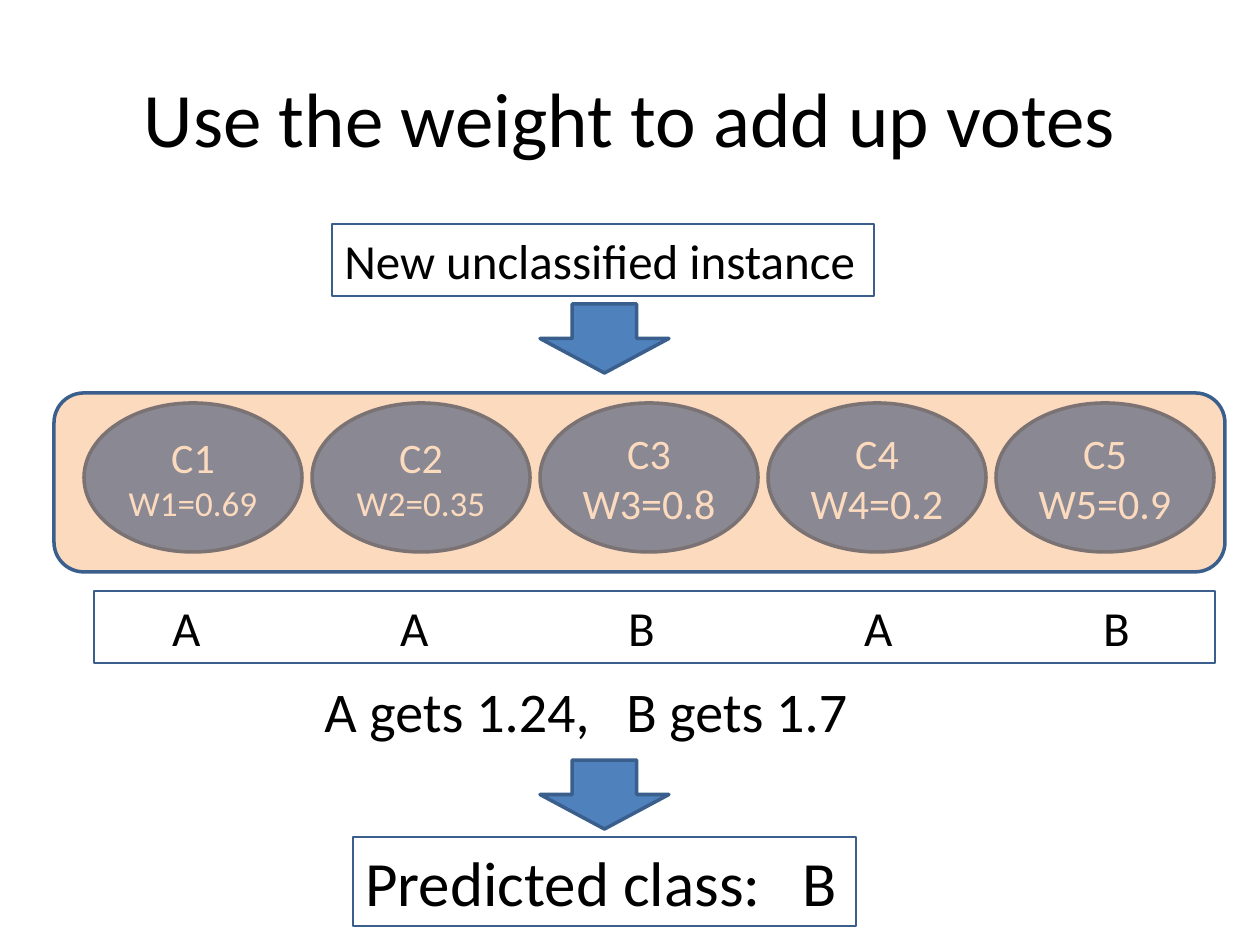
from lxml.etree import SubElement
from pptx import Presentation
from pptx.dml.color import RGBColor
from pptx.enum.shapes import MSO_SHAPE
from pptx.enum.text import MSO_ANCHOR, PP_ALIGN
from pptx.oxml.ns import qn
from pptx.util import Emu, Pt

BLACK = RGBColor(0x00, 0x00, 0x00)
WHITE = RGBColor(0xFF, 0xFF, 0xFF)
BLUE = RGBColor(0x4F, 0x81, 0xBD)
NAVY = RGBColor(0x3A, 0x5F, 0x8C)
ORANGE = RGBColor(0xF7, 0x96, 0x46)


def px(n):
    return Emu(round(n * 914400 / 126))


class SlideBuilder:
    font = "Calibri"

    def __init__(self, prs):
        self.s = prs.slides.add_slide(prs.slide_layouts[5])

    def style(self, p, size, color, align):
        p.alignment = align
        for r in p.runs:
            r.font.name = self.font
            r.font.size = Pt(size)
            r.font.color.rgb = color

    def title(self, text, x, y, w, h):
        sp = self.s.shapes.title
        sp.left, sp.top, sp.width, sp.height = map(px, (x, y, w, h))
        tf = sp.text_frame
        tf.text = text
        tf.vertical_anchor = MSO_ANCHOR.MIDDLE
        self.style(tf.paragraphs[0], 44, BLACK, PP_ALIGN.CENTER)

    def shape(self, kind, x, y, w, h, fill=BLUE, alpha=None):
        sp = self.s.shapes.add_shape(kind, px(x), px(y), px(w), px(h))
        sp.shadow.inherit = False
        sp.fill.solid()
        sp.fill.fore_color.rgb = fill
        if alpha is not None:
            color = sp.fill._xPr.find(".//" + qn("a:srgbClr"))
            SubElement(color, qn("a:alpha"), val=str(alpha * 1000))
        sp.line.color.rgb = NAVY
        sp.line.width = Pt(2)
        return sp

    def classifier(self, name, weight, weight_size, x, y, w, h):
        tf = self.shape(MSO_SHAPE.OVAL, x, y, w, h).text_frame
        tf.margin_left = tf.margin_right = 0
        tf.vertical_anchor = MSO_ANCHOR.MIDDLE
        tf.text = f"{name}\n{weight}"
        for p, size in zip(tf.paragraphs, (24, weight_size)):
            self.style(p, size, WHITE, PP_ALIGN.CENTER)

    def text(self, text, size, x, y, w, h, border=True, tabs=(), tab_align="l"):
        sp = self.s.shapes.add_textbox(px(x), px(y), px(w), px(h))
        if border:
            sp.line.color.rgb = NAVY
            sp.line.width = Pt(0.75)
        tf = sp.text_frame
        tf.word_wrap = bool(tabs)
        tf.text = text
        p = tf.paragraphs[0]
        self.style(p, size, BLACK, PP_ALIGN.LEFT)
        if tabs:
            tab_list = SubElement(p._p.get_or_add_pPr(), qn("a:tabLst"))
            for pos in tabs:
                SubElement(tab_list, qn("a:tab"), pos=str(px(pos)), algn=tab_align)


def main():
    prs = Presentation()
    prs.slide_width, prs.slide_height = px(1260), px(945)
    b = SlideBuilder(prs)
    b.title("Use the weight to add up votes", 63, 38, 1134, 157)

    weights = [("0.69", 20), ("0.35", 20), ("0.8", 24), ("0.2", 24), ("0.9", 24)]
    for i, (weight, size) in enumerate(weights):
        n = i + 1
        b.classifier(f"C{n}", f"W{n}={weight}", size, 84 + 228 * i, 403, 218, 149)
    b.shape(MSO_SHAPE.ROUNDED_RECTANGLE, 54, 393, 1171, 179, ORANGE, 35)

    b.text("New unclassified instance", 28, 332, 224, 542, 72)
    for y in (304, 760):
        b.shape(MSO_SHAPE.DOWN_ARROW, 540, y, 129, 69)
    b.text("\tA\tA\tB\tA\tB", 28, 94, 591, 1121, 72,
           tabs=(80, 308, 535, 772, 1010), tab_align="ctr")
    b.text("A gets 1.24,\tB gets 1.7", 32, 312, 670, 556, 81, border=False, tabs=(302,))
    b.text("Predicted class:\tB", 36, 353, 837, 503, 89, tabs=(437,))
    prs.save("out.pptx")


if __name__ == "__main__":
    main()
